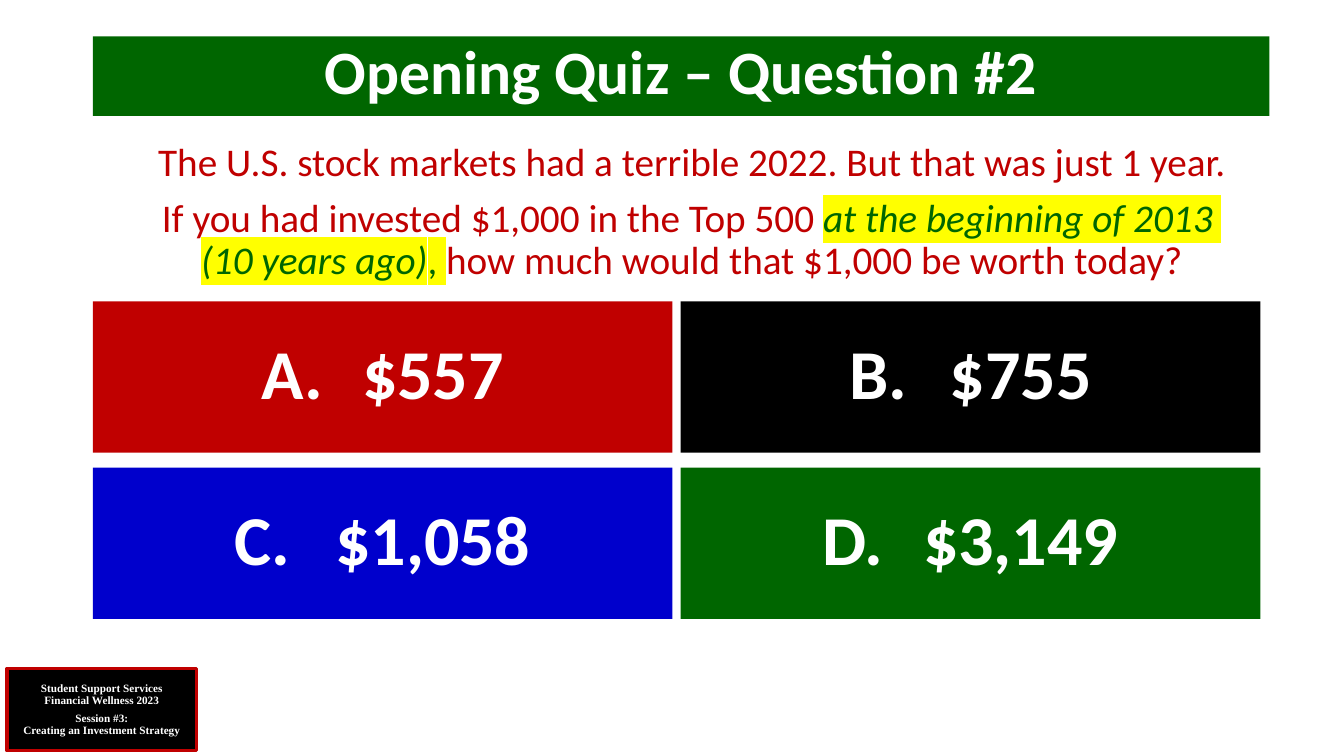
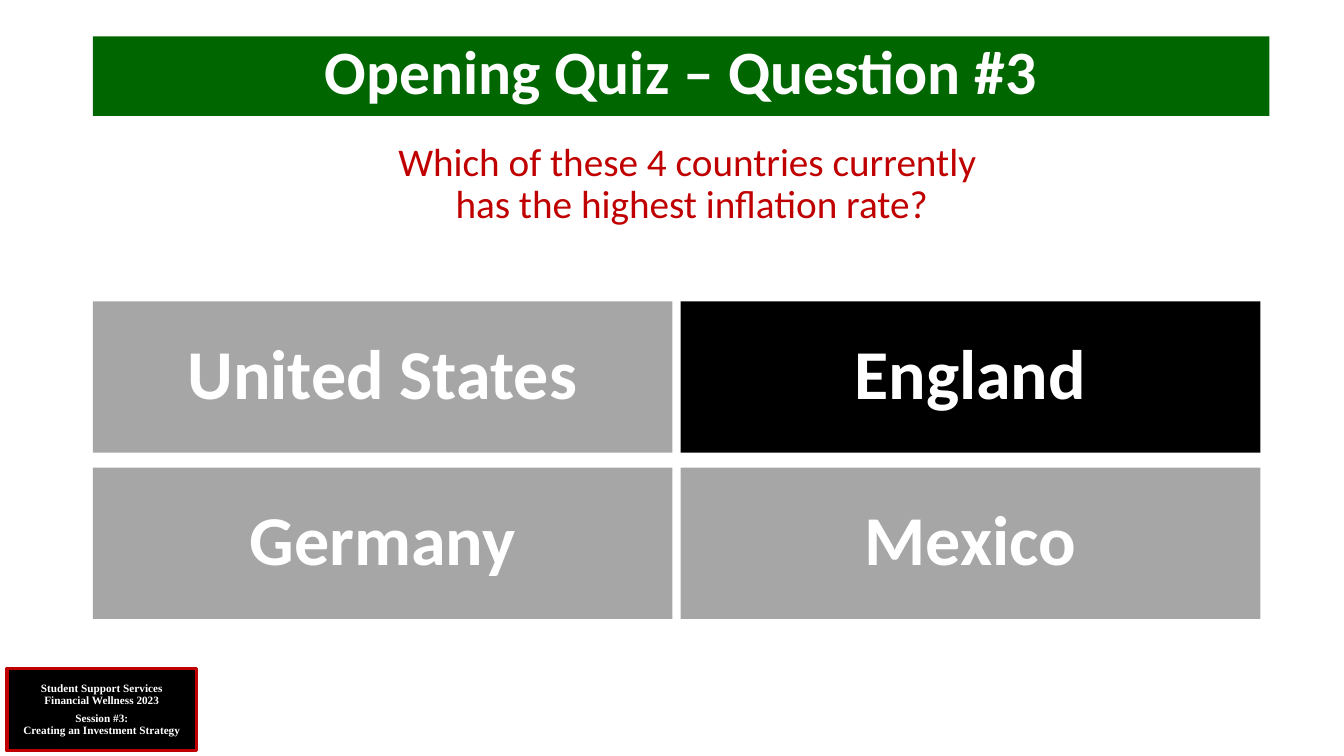
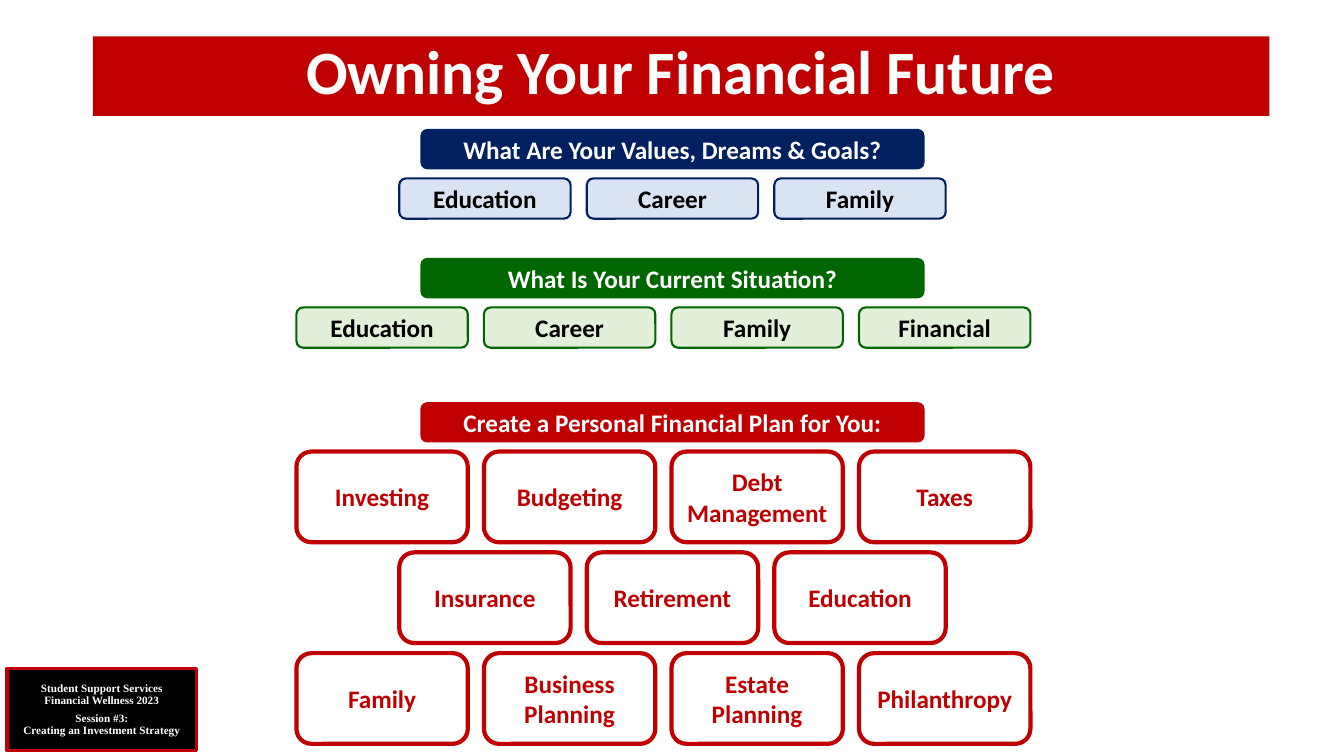
import copy
import dataclasses

import pptx
import pptx.dml.color
import pptx.enum.shapes
import pptx.enum.text
import pptx.oxml
import pptx.oxml.ns
import pptx.util

RGBColor = pptx.dml.color.RGBColor
WHITE = RGBColor(0xFF, 0xFF, 0xFF)
BLACK = RGBColor(0x00, 0x00, 0x00)
RED = RGBColor(0xC0, 0x00, 0x00)
GREEN = RGBColor(0x00, 0x66, 0x00)
BLUE = RGBColor(0x00, 0x00, 0xCC)
NAVY = RGBColor(0x00, 0x20, 0x60)
GREY = RGBColor(0xA6, 0xA6, 0xA6)
PALE_BLUE = RGBColor(0xDA, 0xE3, 0xF3)
PALE_GREEN = RGBColor(0xE2, 0xF0, 0xD9)
YELLOW = RGBColor(0xFF, 0xFF, 0x00)

RECTANGLE = pptx.enum.shapes.MSO_SHAPE.RECTANGLE
ROUNDED = pptx.enum.shapes.MSO_SHAPE.ROUNDED_RECTANGLE
TOP = pptx.enum.text.MSO_ANCHOR.TOP
MIDDLE = pptx.enum.text.MSO_ANCHOR.MIDDLE

TITLE_FORMAT = {"name": "Calibri", "size": 44, "bold": True, "color": WHITE}
QUESTION_FORMAT = {"name": "Calibri", "size": 28, "color": RED}
ANSWER_FORMAT = {"name": "Calibri", "size": 50, "bold": True, "color": WHITE}
CHIP_FORMAT = {"name": "Calibri", "size": 18, "bold": True}
BADGE_FORMAT = {"name": "Times New Roman", "size": 8, "bold": True, "color": WHITE}
MARKED = {"color": GREEN, "highlight": YELLOW}


@dataclasses.dataclass
class Box:
    """A region in inches, which can be divided into equal cells."""
    left: float
    top: float
    width: float
    height: float

    def place(self, shape):
        for side, value in dataclasses.asdict(self).items():
            setattr(shape, side, pptx.util.Inches(value))

    def cell(self, column, row, columns, rows, gap_across, gap_down):
        width = (self.width - gap_across * (columns - 1)) / columns
        height = (self.height - gap_down * (rows - 1)) / rows
        return Box(self.left + column * (width + gap_across),
                   self.top + row * (height + gap_down), width, height)


PAGE = Box(0, 0, 13.33, 7.5)
TITLE_BOX = Box(0.92, 0.36, 11.67, 0.79)
QUESTION_BOX = Box(0.92, 1.36, 11.88, 5.4)
ANSWERS_BOX = Box(0.92, 2.99, 11.58, 3.15)
BADGE_BOX = Box(0.07, 6.63, 1.88, 0.82)
CHIP_WIDTH, CHIP_GAP = 1.7, 0.16
ROW_LEFTS = {3: 3.96, 4: 2.94}


def format_span(span, values):
    for key, value in values.items():
        if key == "color":
            span.font.color.rgb = value
        elif key == "size":
            span.font.size = pptx.util.Pt(value)
        elif key != "highlight":
            setattr(span.font, key, value)
    if "highlight" in values:
        mark = pptx.oxml.parse_xml(
            f'<a:highlight {pptx.oxml.ns.nsdecls("a")}>'
            f'<a:srgbClr val="{values["highlight"]}"/></a:highlight>')
        span.font.fill  # the mark follows the fill in the run properties
        span._r.rPr.find(pptx.oxml.ns.qn("a:solidFill")).addnext(mark)


def add_spans(para, text, values):
    """Add text to a paragraph, with a line break at each newline."""
    for index, piece in enumerate(text.split("\n")):
        if index:
            para.add_line_break()
            para._p[-1].append(copy.deepcopy(span._r.rPr))
        span = para.add_run()
        span.text = piece
        format_span(span, values)


def write(shape, paragraphs, values, anchor=MIDDLE, line_spacing=0.9, gap=0):
    """Fill a shape with centred paragraphs, each a list of (text, changes)."""
    frame = shape.text_frame
    frame.word_wrap = True
    frame.auto_size = pptx.enum.text.MSO_AUTO_SIZE.NONE
    frame.vertical_anchor = anchor
    for index, spans in enumerate(paragraphs):
        para = frame.add_paragraph() if index else frame.paragraphs[0]
        para.alignment = pptx.enum.text.PP_ALIGN.CENTER
        para.line_spacing = line_spacing
        para.space_before = pptx.util.Pt(gap if index else 0)
        for text, changes in spans:
            add_spans(para, text, {**values, **changes})


def append_to_properties(para, xml):
    para._p.get_or_add_pPr().append(pptx.oxml.parse_xml(xml))


def add_panel(page, box, kind, fill, line=None, line_width=0):
    panel = page.shapes.add_shape(kind, 0, 0, 0, 0)
    box.place(panel)
    panel.shadow.inherit = False
    panel.fill.solid()
    panel.fill.fore_color.rgb = fill
    if line is None:
        panel.line.fill.background()
    else:
        panel.line.color.rgb = line
        panel.line.width = pptx.util.Pt(line_width)
    return panel


def add_badge(deck, page, box):
    """Draw the session badge and move it to the master, for all slides."""
    badge = add_panel(page, box, RECTANGLE, BLACK, RED, 2.25)
    lines = ["Student Support Services\nFinancial Wellness 2023",
             "Session #3:\nCreating an Investment Strategy"]
    write(badge, [[(line, {})] for line in lines], BADGE_FORMAT, gap=4)
    deck.slide_master.shapes.element.append(badge.element)


def add_title(page, box, text, fill):
    title = page.shapes.title
    box.place(title)
    title.fill.solid()
    title.fill.fore_color.rgb = fill
    write(title, [[(text, {})]], TITLE_FORMAT, anchor=TOP)


def add_question(page, box, paragraphs):
    body = page.placeholders[1]
    box.place(body)
    write(body, paragraphs, QUESTION_FORMAT, anchor=TOP, gap=10)
    for para in body.text_frame.paragraphs:
        properties = para._p.get_or_add_pPr()
        properties.set("marL", "0")
        properties.set("indent", "0")
        append_to_properties(para, f'<a:buNone {pptx.oxml.ns.nsdecls("a")}/>')


def add_answers(page, box, answers):
    """Lay out four (text, fill) answers, two to a row."""
    for index, (text, fill) in enumerate(answers):
        row, column = divmod(index, 2)
        tile = add_panel(page, box.cell(column, row, 2, 2, 0.08, 0.15), RECTANGLE, fill)
        write(tile, [[(text, {})]], ANSWER_FORMAT)
        append_to_properties(
            tile.text_frame.paragraphs[0],
            f'<a:tabLst {pptx.oxml.ns.nsdecls("a")}><a:tab pos="914400" algn="l"/></a:tabLst>')


def add_chip_row(page, box, names, chip):
    for column, name in enumerate(names):
        cell = box.cell(column, 0, len(names), 1, CHIP_GAP, 0)
        panel = add_panel(page, cell, ROUNDED, chip["fill"], chip["line"], chip["line_width"])
        write(panel, [[(name, {"color": chip["color"]})]], CHIP_FORMAT, line_spacing=1)


def add_stage(page, top, heading, rows, chip):
    """Add a heading bar with rows of chips under it."""
    bar = add_panel(page, Box(4.17, top, 5, 0.4), ROUNDED, chip["line"])
    write(bar, [[(heading, {"color": WHITE})]], CHIP_FORMAT, line_spacing=1)
    for index, names in enumerate(rows):
        count = len(names)
        width = count * CHIP_WIDTH + (count - 1) * CHIP_GAP
        row_top = top + 0.49 + index * (chip["height"] + 0.1)
        add_chip_row(page, Box(ROW_LEFTS[count], row_top, width, chip["height"]), names, chip)


def add_quiz_page(page, title, question, answers):
    add_title(page, TITLE_BOX, title, GREEN)
    add_question(page, QUESTION_BOX, question)
    add_answers(page, ANSWERS_BOX, answers)


def add_plan_page(page):
    add_title(page, TITLE_BOX, "Owning Your Financial Future", RED)
    small = {"height": 0.4, "line_width": 1.5, "color": BLACK}
    large = {"height": 0.9, "line_width": 3, "color": RED}
    add_stage(page, 1.28, "What Are Your Values, Dreams & Goals?",
              [["Education", "Career", "Family"]],
              {**small, "fill": PALE_BLUE, "line": NAVY})
    add_stage(page, 2.56, "What Is Your Current Situation?",
              [["Education", "Career", "Family", "Financial"]],
              {**small, "fill": PALE_GREEN, "line": GREEN})
    add_stage(page, 3.99, "Create a Personal Financial Plan for You:",
              [["Investing", "Budgeting", "Debt Management", "Taxes"],
               ["Insurance", "Retirement", "Education"],
               ["Family", "Business Planning", "Estate Planning", "Philanthropy"]],
              {**large, "fill": WHITE, "line": RED})


def main():
    deck = pptx.Presentation()
    deck.slide_width = pptx.util.Inches(PAGE.width)
    deck.slide_height = pptx.util.Inches(PAGE.height)
    title_and_body, title_only = deck.slide_layouts[1], deck.slide_layouts[5]

    market_page = deck.slides.add_slide(title_and_body)
    add_badge(deck, market_page, BADGE_BOX)
    add_quiz_page(
        market_page, "Opening Quiz – Question #2",
        [[("The U.S. stock markets had a terrible 2022. But that was just 1 year.", {})],
         [("If you had invested $1,000 in the Top 500 ", {}),
          ("at the beginning of 2013 \n(10 years ago)", {**MARKED, "italic": True}),
          (", ", MARKED),
          ("how much would that $1,000 be worth today?", {})]],
        [("A.\t$557", RED), ("B.\t$755", BLACK),
         ("C.\t$1,058", BLUE), ("D.\t$3,149", GREEN)])

    add_quiz_page(
        deck.slides.add_slide(title_and_body), "Opening Quiz – Question #3",
        [[("Which of these 4 countries currently \nhas the highest inflation rate?", {})]],
        [("United States", GREY), ("England", BLACK),
         ("Germany", GREY), ("Mexico", GREY)])

    add_plan_page(deck.slides.add_slide(title_only))
    deck.save("out.pptx")


if __name__ == "__main__":
    main()
